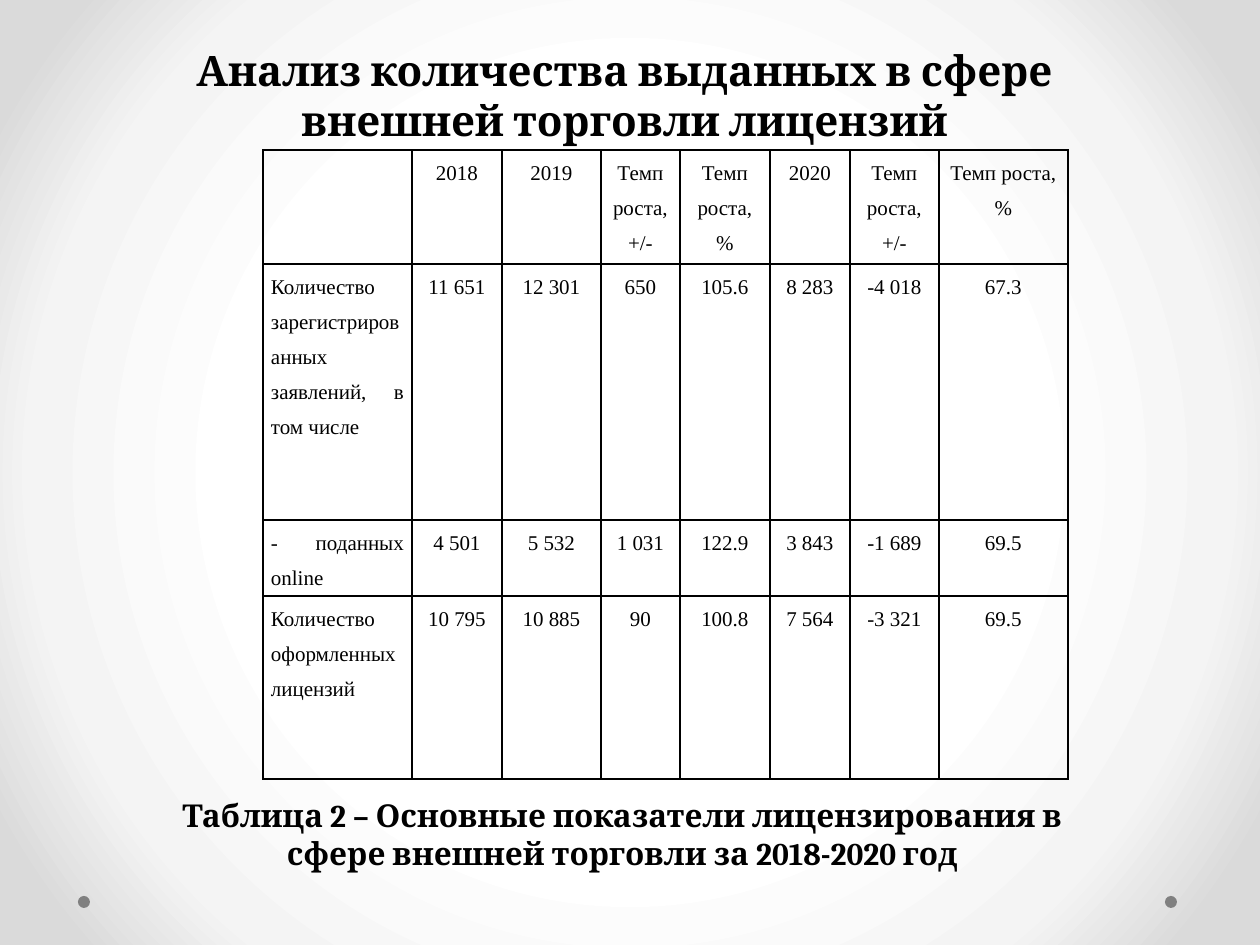
from pptx import Presentation
from pptx.dml.color import RGBColor
from pptx.enum.text import MSO_ANCHOR, PP_ALIGN
from pptx.enum.shapes import MSO_SHAPE
from pptx.oxml import parse_xml
from pptx.oxml.ns import nsdecls

SCALE = 914400 / 126
COLORS = {"text": "000000", "dot": "808080", "center": "FFFFFF", "middle": "F4F4F4", "edge": "DADADA"}


def px(value):
    return round(value * SCALE)


def write_text(frame, text, size, font, bold=False, align=PP_ALIGN.CENTER, spacing=None):
    frame.word_wrap = True
    paragraph = frame.paragraphs[0]
    paragraph.alignment = align
    paragraph.line_spacing = spacing
    run = paragraph.add_run()
    run.text = text
    run.font.size = size * 12700
    run.font.name = font
    run.font.bold = bold
    run.font.color.rgb = RGBColor.from_string(COLORS["text"])


presentation = Presentation()
presentation.slide_width = px(1260)
presentation.slide_height = px(945)
slide = presentation.slides.add_slide(presentation.slide_layouts[5])

slide.background.fill.gradient()
gradient = slide.background._cSld.bg.bgPr[0]
stops = "".join(
    f'<a:gs pos="{position * 1000}"><a:srgbClr val="{COLORS[name]}"/></a:gs>'
    for position, name in [(50, "center"), (76, "middle"), (92, "edge")]
)
gradient.getparent().replace(gradient, parse_xml(
    f'<a:gradFill {nsdecls("a")} rotWithShape="1"><a:gsLst>{stops}</a:gsLst><a:path path="circle">'
    '<a:fillToRect l="50000" t="50000" r="50000" b="50000"/></a:path></a:gradFill>'
))

for left in (78, 1165):
    dot = slide.shapes.add_shape(MSO_SHAPE.OVAL, px(left), px(896), px(12), px(12))
    dot.shadow.inherit = False
    dot.fill.solid()
    dot.fill.fore_color.rgb = RGBColor.from_string(COLORS["dot"])
    dot.line.fill.background()

title = slide.shapes.title
title.left, title.top, title.width, title.height = px(84), px(37), px(1081), px(115)
title.text_frame.vertical_anchor = MSO_ANCHOR.MIDDLE
write_text(title.text_frame, "Анализ количества выданных в сфере внешней торговли лицензий",
           size=24, font="Cambria", bold=True)

rows = [
    ["", "2018", "2019", "Темп роста, +/-", "Темп роста, %", "2020", "Темп роста, +/-", "Темп роста, %"],
    ["Количество зарегистрированных заявлений, в том числе",
     "11 651", "12 301", "650", "105.6", "8 283", "-4 018", "67.3"],
    ["- поданных online", "4 501", "5 532", "1 031", "122.9", "3 843", "-1 689", "69.5"],
    ["Количество оформленных лицензий", "10 795", "10 885", "90", "100.8", "7 564", "-3 321", "69.5"],
]
column_widths = [149, 90, 99, 79, 90, 80, 89, 129]
row_heights = [114, 256, 76, 183]
table = slide.shapes.add_table(len(rows), len(column_widths), px(263), px(150),
                               px(sum(column_widths)), px(sum(row_heights))).table
table.first_row = False
table.horz_banding = False
for column, width in zip(table.columns, column_widths):
    column.width = px(width)
for row, height in zip(table.rows, row_heights):
    row.height = px(height)

for row, texts in zip(table.rows, rows):
    for index, (cell, text) in enumerate(zip(row.cells, texts)):
        cell.margin_left = cell.margin_right = px(8)
        cell.margin_top = cell.margin_bottom = 0
        write_text(cell.text_frame, text, size=12, font="Times New Roman", spacing=1.5,
                   align=PP_ALIGN.CENTER if index else PP_ALIGN.JUSTIFY)
        properties = cell._tc.get_or_add_tcPr()
        for side in ("lnL", "lnR", "lnT", "lnB"):
            properties.append(parse_xml(
                f'<a:{side} {nsdecls("a")} w="12700"><a:solidFill>'
                f'<a:srgbClr val="{COLORS["text"]}"/></a:solidFill></a:{side}>'
            ))
        cell.fill.background()

caption = slide.shapes.add_textbox(px(123), px(790), px(999), px(89))
write_text(caption.text_frame,
           "Таблица 2 – Основные показатели лицензирования в сфере внешней торговли за 2018-2020 год",
           size=18, font="Cambria", bold=True)

presentation.save("out.pptx")
